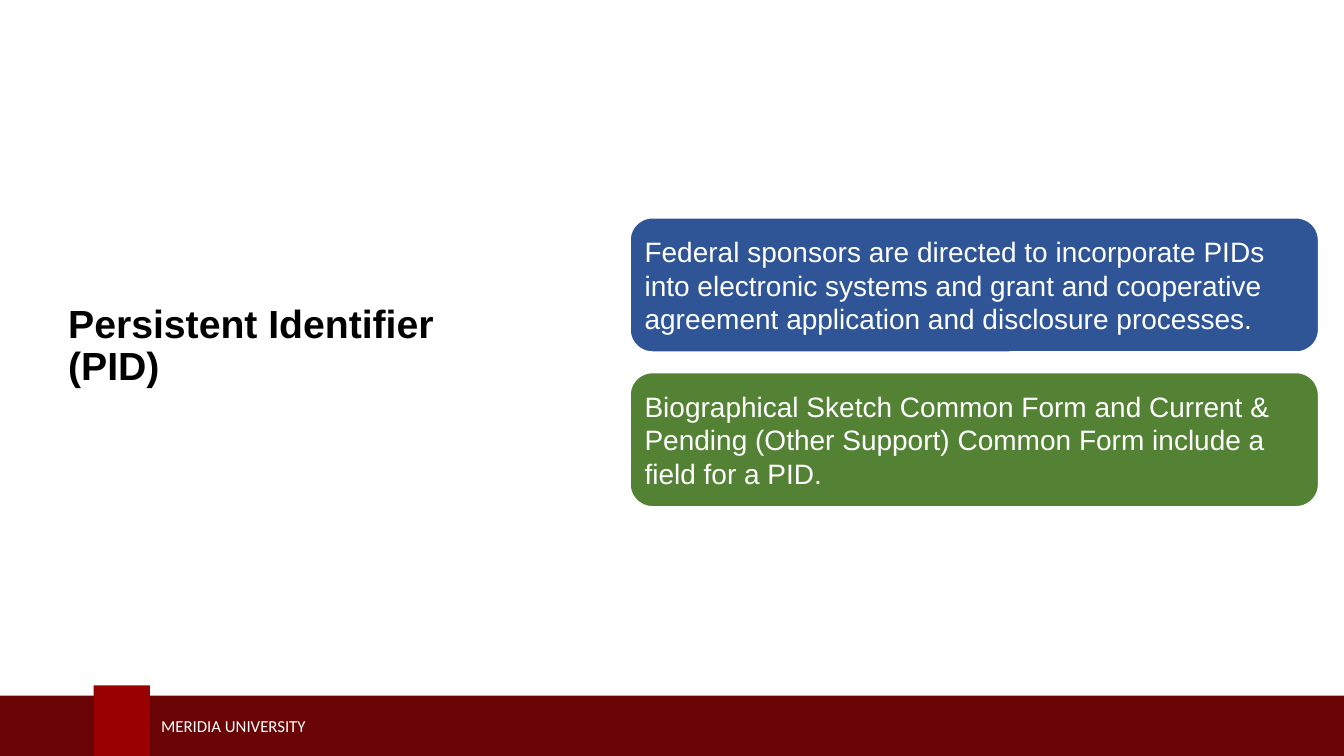
from dataclasses import dataclass

from pptx import Presentation
from pptx import util as u
from pptx.dml.color import RGBColor
from pptx.enum import shapes, text


@dataclass(frozen=True)
class Theme:
    white: str = "FFFFFF"
    black: str = "000000"
    bar: str = "690304"
    accent: str = "990000"
    blue: str = "2F5597"
    green: str = "548235"
    body_font: str = "Arial"
    footer_font: str = "Calibri"
    title_size: int = 28
    card_size: int = 20
    footer_size: int = 12


def set_all(target, values):
    for name, value in values.items():
        setattr(target, name, value)


class SlideBuilder:
    def __init__(self, slide, theme):
        self.slide = slide
        self.theme = theme

    def block(self, box, color, kind=shapes.MSO_SHAPE.RECTANGLE, outline=None):
        shape = self.slide.shapes.add_shape(kind, *map(u.Cm, box))
        shape.shadow.inherit = False
        shape.fill.solid()
        shape.fill.fore_color.rgb = RGBColor.from_string(color)
        if outline:
            shape.line.color.rgb = RGBColor.from_string(outline)
            shape.line.width = u.Pt(1)
        else:
            shape.line.fill.background()
        return shape

    def fill_text(self, shape, words, font, size, color, bold=False, spacing=1.0,
                  **frame_format):
        frame = shape.text_frame
        set_all(frame, {"word_wrap": True,
                        "vertical_anchor": text.MSO_ANCHOR.MIDDLE, **frame_format})
        paragraph = frame.paragraphs[0]
        set_all(paragraph, {"alignment": text.PP_ALIGN.LEFT, "line_spacing": spacing})
        run = paragraph.add_run()
        run.text = words
        set_all(run.font, {"name": font, "size": u.Pt(size), "bold": bold})
        run.font.color.rgb = RGBColor.from_string(color)

    def label(self, box, words, **text_format):
        self.fill_text(self.slide.shapes.add_textbox(*map(u.Cm, box)), words, **text_format)

    def card(self, box, color, words):
        theme = self.theme
        shape = self.block(box, color, shapes.MSO_SHAPE.ROUNDED_RECTANGLE, theme.white)
        sides = ("left", "top", "right", "bottom")
        margins = {f"margin_{side}": u.Cm(0.2) for side in sides}
        self.fill_text(shape, words, theme.body_font, theme.card_size, theme.white, **margins)

    def footer(self, words):
        theme = self.theme
        self.block((0, 17.53, 33.87, 1.52), theme.bar)
        self.block((2.36, 17.27, 1.42, 1.78), theme.accent)
        self.label((3.81, 17.91, 13.39, 0.76), words, font=theme.footer_font,
                   size=theme.footer_size, color=theme.white)


def main():
    presentation = Presentation()
    set_all(presentation, {"slide_width": u.Cm(33.87), "slide_height": u.Cm(19.05)})
    theme = Theme()
    slide = presentation.slides.add_slide(presentation.slide_layouts[6])
    builder = SlideBuilder(slide, theme)

    builder.footer("MERIDIA UNIVERSITY")
    builder.label((1.47, 0.99, 10.95, 15.49), "Persistent Identifier (PID)",
                  font=theme.body_font, size=theme.title_size, color=theme.black,
                  bold=True, spacing=0.9)

    cards = [
        (theme.blue, "Federal sponsors are directed to incorporate PIDs into electronic "
                     "systems and grant and cooperative agreement application and "
                     "disclosure processes."),
        (theme.green, "Biographical Sketch Common Form and Current & Pending (Other "
                      "Support) Common Form include a field for a PID."),
    ]
    first_top, pitch = 5.49, 3.9
    for index, (color, words) in enumerate(cards):
        builder.card((15.88, first_top + index * pitch, 17.35, 3.38), color, words)

    presentation.save("out.pptx")


if __name__ == "__main__":
    main()
